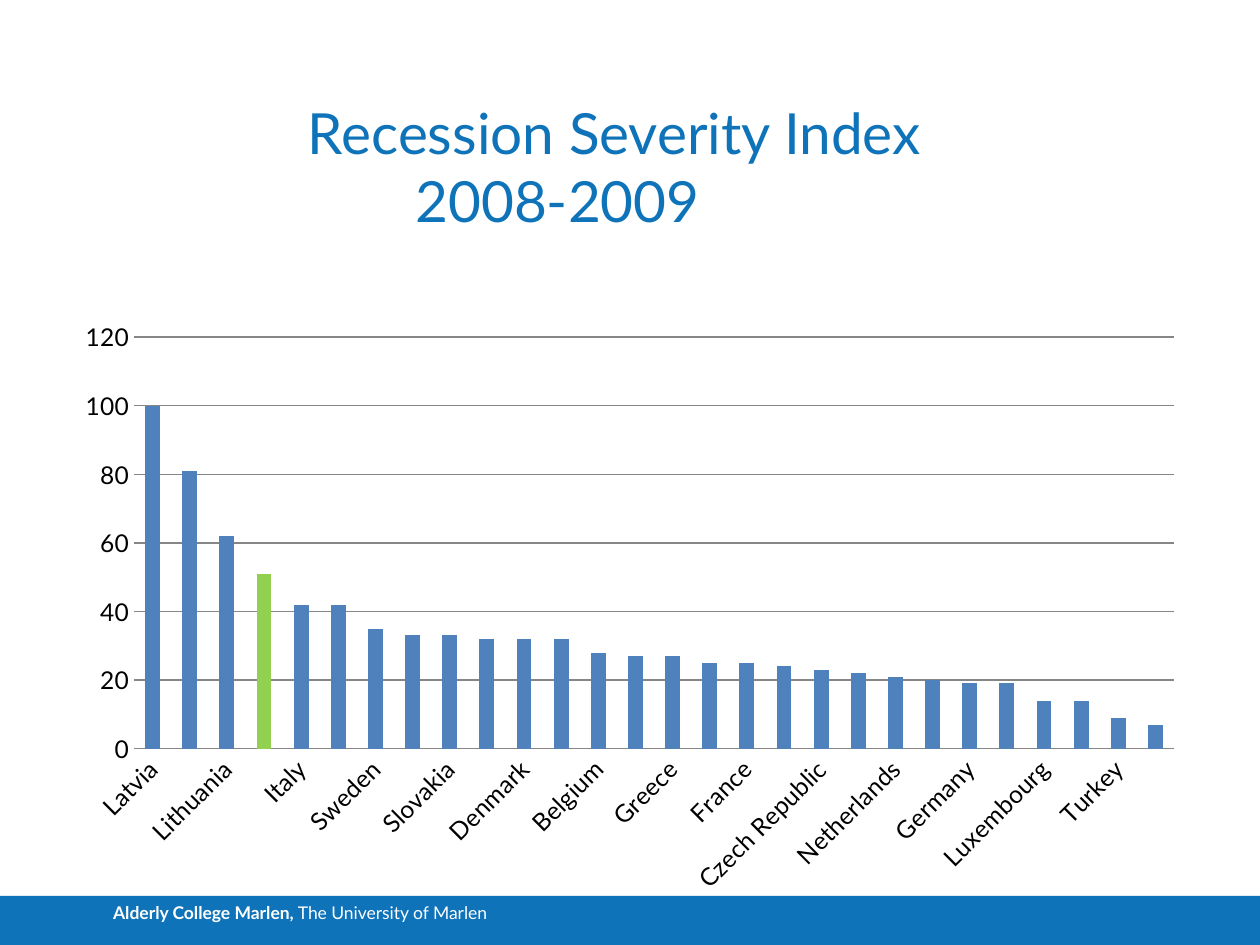
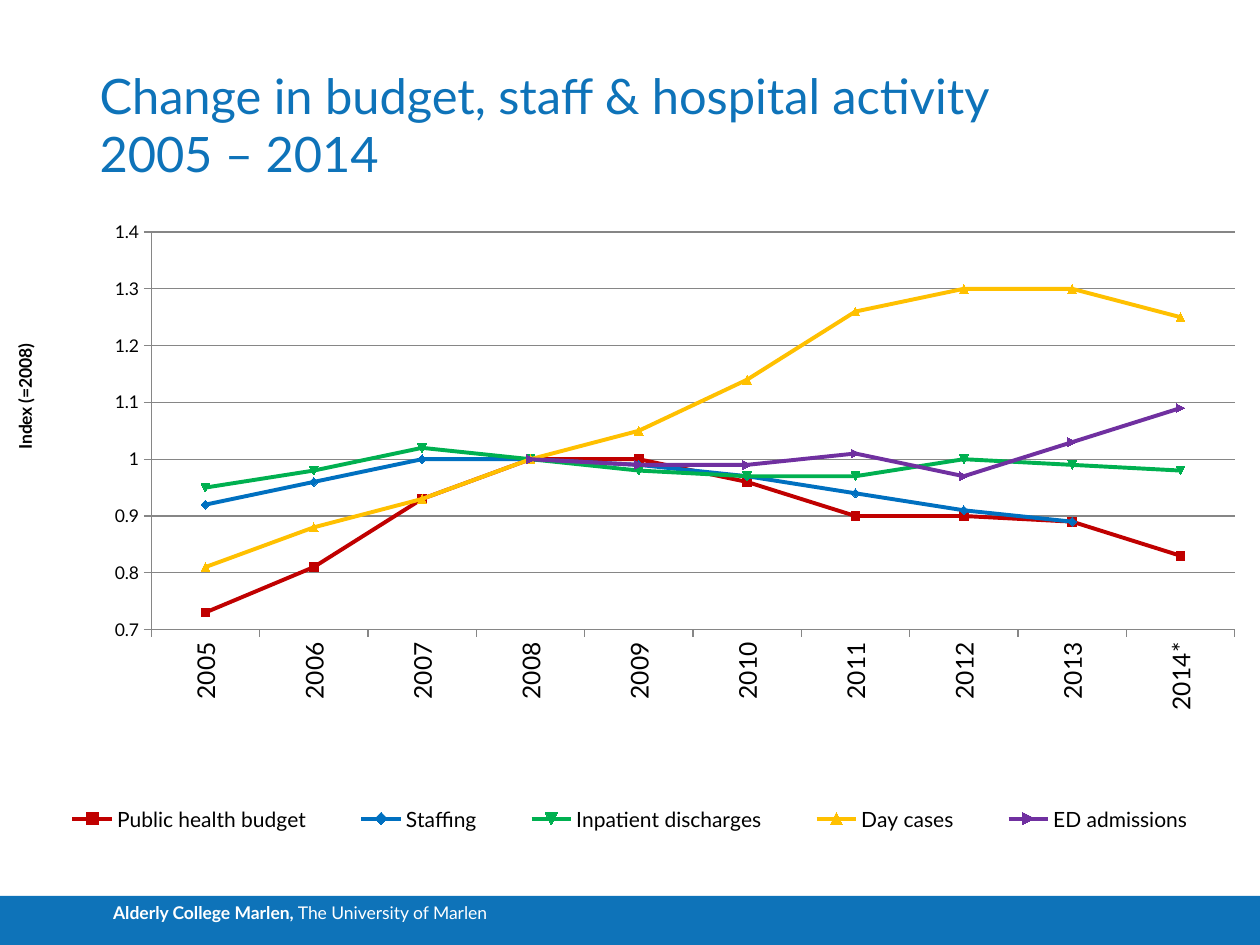
from dataclasses import dataclass
from typing import Any, Optional

from pptx import Presentation
from pptx import util as u
from pptx.chart.data import CategoryChartData
from pptx.dml.color import RGBColor
from pptx.enum import chart as ch
from pptx.enum import shapes, text
from pptx.oxml import parse_xml
from pptx.oxml.ns import nsdecls, qn

Pt = u.Pt
FONT = "Lato"
BLUE = RGBColor(0x0E, 0x73, 0xB9)
WHITE = RGBColor(0xFF, 0xFF, 0xFF)
BLACK = RGBColor(0, 0, 0)
GRID = RGBColor(0x86, 0x86, 0x86)
BAR = RGBColor(0x4F, 0x81, 0xBD)
HIGHLIGHT = RGBColor(0x92, 0xD0, 0x50)

Box = tuple[float, float, float, float]


@dataclass(frozen=True)
class TitleLine:
    text: str
    indent: float = 0


@dataclass(frozen=True)
class Title:
    box: Box
    size: float
    align: Any
    lines: tuple[TitleLine, ...]


@dataclass(frozen=True)
class Series:
    name: str
    values: tuple[Optional[float], ...]
    color: RGBColor


@dataclass(frozen=True)
class ChartSpec:
    kind: Any
    box: Box
    plot: Box
    categories: tuple[str, ...]
    series: tuple[Series, ...]
    label_rotation: int
    value_size: float
    tick: Any
    scale: dict[str, float]


SEVERITY_TITLE = Title(
    (19.44, 90, 590.4, 43.92), 32.4, text.PP_ALIGN.CENTER,
    (TitleLine("Recession Severity Index", 73), TitleLine("2008-2009", 8)))

SEVERITY = ChartSpec(
    ch.XL_CHART_TYPE.COLUMN_CLUSTERED, (36, 177.12, 648, 340.56),
    (40.6, 15.5, 594.3, 235.3),
    ("Latvia", "Estonia", "Lithuania", "Ireland", "Italy", "Finland", "Sweden",
     "Slovenia", "Slovakia", "Hungary", "Denmark", "United Kingdom", "Belgium",
     "Romania", "Greece", "Bulgaria", "France", "Spain", "Czech Republic",
     "Austria", "Netherlands", "Portugal", "Germany", "Malta", "Luxembourg",
     "Cyprus", "Turkey", "Norway"),
    (Series("Series 1", (100, 81, 62, 51, 42, 42, 35, 33, 33, 32, 32, 32, 28, 27,
                         27, 25, 25, 24, 23, 22, 21, 20, 19, 19, 14, 14, 9, 7), BAR),),
    -45, 14, ch.XL_TICK_MARK.NONE,
    {"minimum_scale": 0, "maximum_scale": 120, "major_unit": 20})

ACTIVITY_TITLE = Title(
    (56.88, 0, 663.12, 104.4), 27.9, text.PP_ALIGN.LEFT,
    (TitleLine("Change in budget, staff & hospital activity"),
     TitleLine("2005 – 2014")))

ACTIVITY = ChartSpec(
    ch.XL_CHART_TYPE.LINE_MARKERS, (0, 104.4, 720, 446.4),
    (86.4, 28.2, 619.2, 227.2),
    tuple(str(year) for year in range(2005, 2014)) + ("2014*",),
    (Series("Public health budget",
            (0.73, 0.81, 0.93, 1, 1, 0.96, 0.9, 0.9, 0.89, 0.83),
            RGBColor(0xC0, 0x00, 0x00)),
     Series("Staffing",
            (0.92, 0.96, 1, 1, 0.99, 0.97, 0.94, 0.91, 0.89, None),
            RGBColor(0x00, 0x70, 0xC0)),
     Series("Inpatient discharges",
            (0.95, 0.98, 1.02, 1, 0.98, 0.97, 0.97, 1, 0.99, 0.98),
            RGBColor(0x00, 0xB0, 0x50)),
     Series("Day cases",
            (0.81, 0.88, 0.93, 1, 1.05, 1.14, 1.26, 1.3, 1.3, 1.25),
            RGBColor(0xFF, 0xC0, 0x00)),
     Series("ED admissions",
            (None, None, None, 1, 0.99, 0.99, 1.01, 0.97, 1.03, 1.09),
            RGBColor(0x70, 0x30, 0xA0))),
    -90, 10, ch.XL_TICK_MARK.OUTSIDE,
    {"minimum_scale": 0.7, "maximum_scale": 1.4, "major_unit": 0.1})


def apply(obj: Any, **fmt: Any) -> None:
    for name, value in fmt.items():
        setattr(obj, name, value)


def set_font(font: Any, size: float, color: RGBColor, bold: bool = False) -> None:
    apply(font, name=FONT, size=Pt(size), bold=bold)
    font.color.rgb = color


def set_line(line: Any, color: RGBColor, width: float) -> None:
    line.color.rgb = color
    line.width = Pt(width)


def set_fill(fmt: Any, color: RGBColor) -> None:
    fmt.fill.solid()
    fmt.fill.fore_color.rgb = color


def set_indent(p: Any, points: float) -> None:
    pPr = p._p.get_or_add_pPr()
    pPr.set("marL", str(Pt(points)))
    pPr.set("indent", "0")


def add_run(p: Any, words: str, size: float, color: RGBColor, bold: bool = False) -> None:
    r = p.add_run()
    r.text = words
    set_font(r.font, size, color, bold)


def add_footer(slide: Any) -> None:
    sp = slide.shapes.add_shape(shapes.MSO_SHAPE.RECTANGLE,
                                *map(Pt, (0, 511.92, 720, 28.08)))
    sp.shadow.inherit = False
    set_fill(sp, BLUE)
    sp.line.fill.background()
    tf = sp.text_frame
    tf.vertical_anchor = text.MSO_ANCHOR.TOP
    p = tf.paragraphs[0]
    p.alignment = text.PP_ALIGN.LEFT
    set_indent(p, 57.6)
    add_run(p, "Alderly College Marlen, ", 10, WHITE, True)
    add_run(p, "The University of Marlen", 10, WHITE)


def add_title(slide: Any, title: Title) -> None:
    tf = slide.shapes.add_textbox(*map(Pt, title.box)).text_frame
    apply(tf, word_wrap=True, vertical_anchor=text.MSO_ANCHOR.BOTTOM,
          margin_left=0, margin_right=0, margin_top=0, margin_bottom=0)
    for i, line in enumerate(title.lines):
        p = tf.add_paragraph() if i else tf.paragraphs[0]
        p.alignment = title.align
        set_indent(p, line.indent)
        add_run(p, line.text, title.size, BLUE)


def set_layout(parent: Any, box: Box, place: tuple[float, ...], after: str = "",
               target: str = "") -> None:
    for old in parent.findall(qn("c:layout")):
        parent.remove(old)
    inner = f'<c:layoutTarget val="{target}"/>' if target else ""
    modes = "".join(f'<c:{k}Mode val="edge"/>' for k in "xy")
    sizes = "".join(f'<c:{k} val="{length / whole}"/>'
                    for k, length, whole in zip("xywh", place, box[2:] * 2))
    layout = parse_xml(f'<c:layout {nsdecls("c")}><c:manualLayout>'
                       f'{inner}{modes}{sizes}</c:manualLayout></c:layout>')
    if after:
        parent.find(qn(after)).addnext(layout)
    else:
        parent.insert(0, layout)


def add_chart(slide: Any, spec: ChartSpec) -> Any:
    data = CategoryChartData()
    data.categories = spec.categories
    for s in spec.series:
        data.add_series(s.name, s.values)
    chart = slide.shapes.add_chart(spec.kind, *map(Pt, spec.box), data).chart
    apply(chart, has_title=False, has_legend=False)
    set_font(chart.font, 10, BLACK)
    chart.plots[0].vary_by_categories = False
    cat, val = chart.category_axis, chart.value_axis
    apply(val, has_major_gridlines=True, **spec.scale)
    set_line(val.major_gridlines.format.line, GRID, 0.75)
    apply(val.tick_labels, number_format="General", number_format_is_linked=False)
    for axis, size in ((cat, 14), (val, spec.value_size)):
        apply(axis, major_tick_mark=spec.tick, minor_tick_mark=ch.XL_TICK_MARK.NONE)
        set_line(axis.format.line, GRID, 0.75)
        set_font(axis.tick_labels.font, size, BLACK)
    root = chart.element
    root.xpath(".//c:catAx/c:txPr/a:bodyPr")[0].set("rot", str(spec.label_rotation * 60000))
    val_ax = root.xpath(".//c:valAx")[0]
    if val_ax.find(qn("c:crossBetween")) is None:
        val_ax.find(qn("c:crosses")).addnext(
            parse_xml(f'<c:crossBetween {nsdecls("c")} val="between"/>'))
    set_layout(root.xpath(".//c:plotArea")[0], spec.box, spec.plot, target="inner")
    return chart


def add_severity_chart(slide: Any) -> None:
    chart = add_chart(slide, SEVERITY)
    chart.plots[0].gap_width = 150
    chart.value_axis.format.line.fill.background()
    bars = chart.plots[0].series[0]
    set_fill(bars.format, BAR)
    set_fill(bars.points[SEVERITY.categories.index("Ireland")].format, HIGHLIGHT)


def add_activity_chart(slide: Any) -> None:
    chart = add_chart(slide, ACTIVITY)
    for line, s in zip(chart.plots[0].series, ACTIVITY.series):
        line.smooth = False
        set_line(line.format.line, s.color, 2.25)
        apply(line.marker, style=ch.XL_MARKER_STYLE.AUTOMATIC, size=5)
        set_fill(line.marker.format, s.color)
        set_line(line.marker.format.line, s.color, 0.75)
    p = chart.value_axis.axis_title.text_frame.paragraphs[0]
    add_run(p, "Index (=2008)", 10, BLACK, True)
    chart.has_legend = True
    apply(chart.legend, position=ch.XL_LEGEND_POSITION.BOTTOM, include_in_layout=False)
    set_font(chart.legend.font, 12, BLACK)
    root = chart.element
    set_layout(root.xpath(".//c:valAx/c:title")[0], ACTIVITY.box, (5.5, 90.5), "c:tx")
    set_layout(root.xpath(".//c:legend")[0], ACTIVITY.box, (14, 350, 692, 26.8),
               "c:legendPos")


def main() -> None:
    prs = Presentation()
    apply(prs, slide_width=Pt(720), slide_height=Pt(540))
    for title, draw_chart in ((SEVERITY_TITLE, add_severity_chart),
                              (ACTIVITY_TITLE, add_activity_chart)):
        slide = prs.slides.add_slide(prs.slide_layouts[6])
        add_footer(slide)
        add_title(slide, title)
        draw_chart(slide)
    prs.save("out.pptx")


if __name__ == "__main__":
    main()
